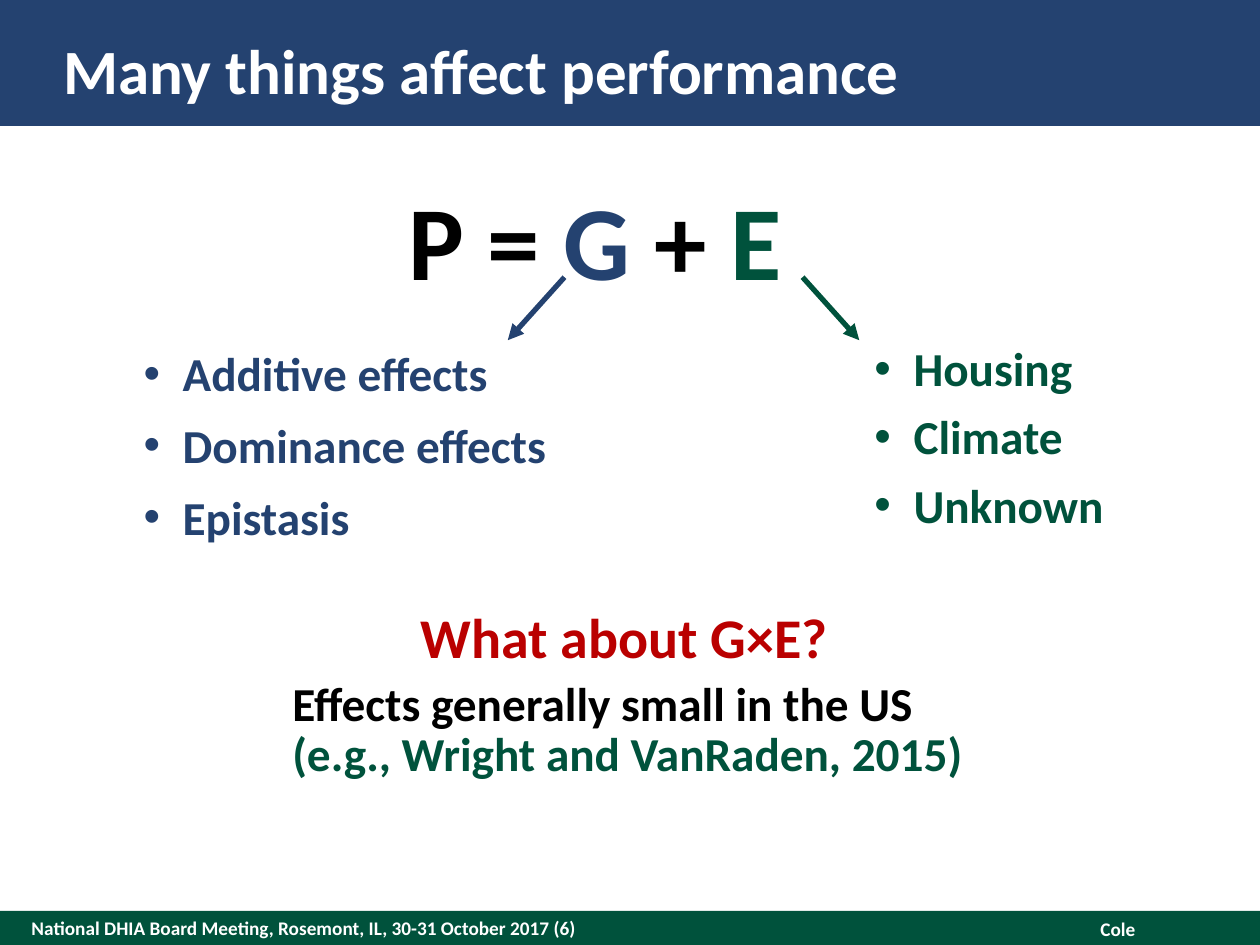
from lxml import etree
from pptx import Presentation
from pptx.dml.color import RGBColor
from pptx.enum.shapes import MSO_CONNECTOR as Connector, MSO_SHAPE as Shape
from pptx.enum.text import MSO_ANCHOR as Anchor, MSO_AUTO_SIZE as AutoSize, PP_ALIGN as Align
from pptx.oxml.ns import qn
from pptx.util import Inches, Pt

FONT = "Calibri"
BLUE = RGBColor(0x24, 0x42, 0x70)
GREEN = RGBColor(0x00, 0x52, 0x3C)
RED = RGBColor(0xBA, 0x00, 0x00)
BLACK = RGBColor(0x00, 0x00, 0x00)
WHITE = RGBColor(0xFF, 0xFF, 0xFF)


def place(shape, left, top, width, height):
    shape.left, shape.top = Inches(left), Inches(top)
    shape.width, shape.height = Inches(width), Inches(height)


def set_frame(frame, side=0, end=0, anchor=Anchor.TOP):
    frame.word_wrap = True
    frame.auto_size = AutoSize.NONE
    frame.vertical_anchor = anchor
    frame.margin_left = frame.margin_right = Inches(side)
    frame.margin_top = frame.margin_bottom = Inches(end)


def style(font, size, color):
    font.name, font.size, font.bold = FONT, Pt(size), True
    font.color.rgb = color


def add_text(slide, box_place, side=0, end=0, anchor=Anchor.TOP):
    box = slide.shapes.add_textbox(*map(Inches, box_place))
    set_frame(box.text_frame, side, end, anchor)
    return box.text_frame


def add_colored_runs(para, parts, size):
    for text, color in parts:
        span = para.add_run()
        span.text = text
        style(span.font, size, color)


def add_band(slide, top, height, color):
    band = slide.shapes.add_shape(
        Shape.RECTANGLE, 0, Inches(top), Inches(10), Inches(height))
    band.shadow.inherit = False
    band.fill.solid()
    band.fill.fore_color.rgb = color
    band.line.fill.background()


def add_footer(slide, text, box_place, align, **frame_options):
    para = add_text(slide, box_place, anchor=Anchor.MIDDLE, **frame_options).paragraphs[0]
    para.text, para.alignment = text, align
    style(para.font, 11, WHITE)


def fill_title(title, text):
    place(title, 0.5, 0.2, 9, 0.7)
    set_frame(title.text_frame, anchor=Anchor.MIDDLE)
    para = title.text_frame.paragraphs[0]
    para.text, para.alignment = text, Align.LEFT
    style(para.font, 36, WHITE)


def fill_list(body, body_place, items, color, spacings):
    place(body, *body_place)
    frame = body.text_frame
    set_frame(frame, 0.25, 0.1)
    frame.text = "\n".join(items)
    for para, spacing in zip(frame.paragraphs, spacings):
        properties = para._p.get_or_add_pPr()
        properties.set("marL", str(Inches(0.31)))
        properties.set("indent", str(Inches(-0.31)))
        etree.SubElement(properties, qn("a:buChar")).set("char", "•")
        para.line_spacing = Pt(spacing)
        para.space_before, para.space_after = Pt(0), Pt(12)
        style(para.font, 27, color)


def add_arrow(slide, start, end, color):
    arrow = slide.shapes.add_connector(
        Connector.STRAIGHT, *map(Inches, (*start, *end)))
    arrow.line.color.rgb = color
    arrow.line.width = Pt(3)
    etree.SubElement(arrow.line._get_or_add_ln(), qn("a:tailEnd")).set("type", "triangle")
    etree.SubElement(arrow._element.spPr, qn("a:effectLst"))


def main():
    deck = Presentation()
    deck.slide_width, deck.slide_height = Inches(10), Inches(7.5)
    slide = deck.slides.add_slide(deck.slide_layouts[3])
    title, genetics, environment = slide.placeholders

    # Header and footer bands, behind the placeholders
    add_band(slide, 7.23, 0.27, GREEN)
    add_band(slide, 0, 1, BLUE)
    for placeholder in (title, genetics, environment):
        slide.shapes._spTree.append(placeholder._element)
    add_footer(slide, "National DHIA Board Meeting, Rosemont, IL, 30-31 October 2017 (6)",
               (0.25, 7.23, 7, 0.27), Align.LEFT)
    add_footer(slide, "Cole", (7.11, 7.23, 2, 0.29), Align.RIGHT, side=0.1, end=0.05)
    fill_title(title, "Many things affect performance")

    # Equation
    equation = add_text(slide, (3.14, 1.34, 6.3, 0.94), 0.1, 0.05).paragraphs[0]
    add_colored_runs(
        equation, [("P = ", BLACK), ("G", BLUE), (" + ", BLACK), ("E", GREEN)], 60)

    # Components of each term
    fill_list(genetics, (0.89, 2.68, 3.74, 1.8),
              ["Additive effects", "Dominance effects", "Epistasis"], BLUE, (29, 29, 29))
    fill_list(environment, (6.69, 2.64, 2.32, 1.8),
              ["Housing", "Climate", "Unknown"], GREEN, (29, 27, 27))
    add_arrow(slide, (4.48, 2.2), (4.03, 2.7), BLUE)
    add_arrow(slide, (6.37, 2.2), (6.82, 2.7), GREEN)

    # Interaction question and answer
    frame = add_text(slide, (2.32, 4.91, 5.37, 1.3))
    question, answer = frame.paragraphs[0], frame.add_paragraph()
    question.alignment = Align.CENTER
    add_colored_runs(question, [("What about G×E? ", RED)], 32)
    add_colored_runs(answer, [("Effects generally small in the US ", BLACK),
                              ("(e.g., Wright and VanRaden, 2015)", GREEN)], 27)
    for para, after in ((question, 6), (answer, 12)):
        para.line_spacing, para.space_after = Pt(29), Pt(after)

    deck.save("out.pptx")


if __name__ == "__main__":
    main()
